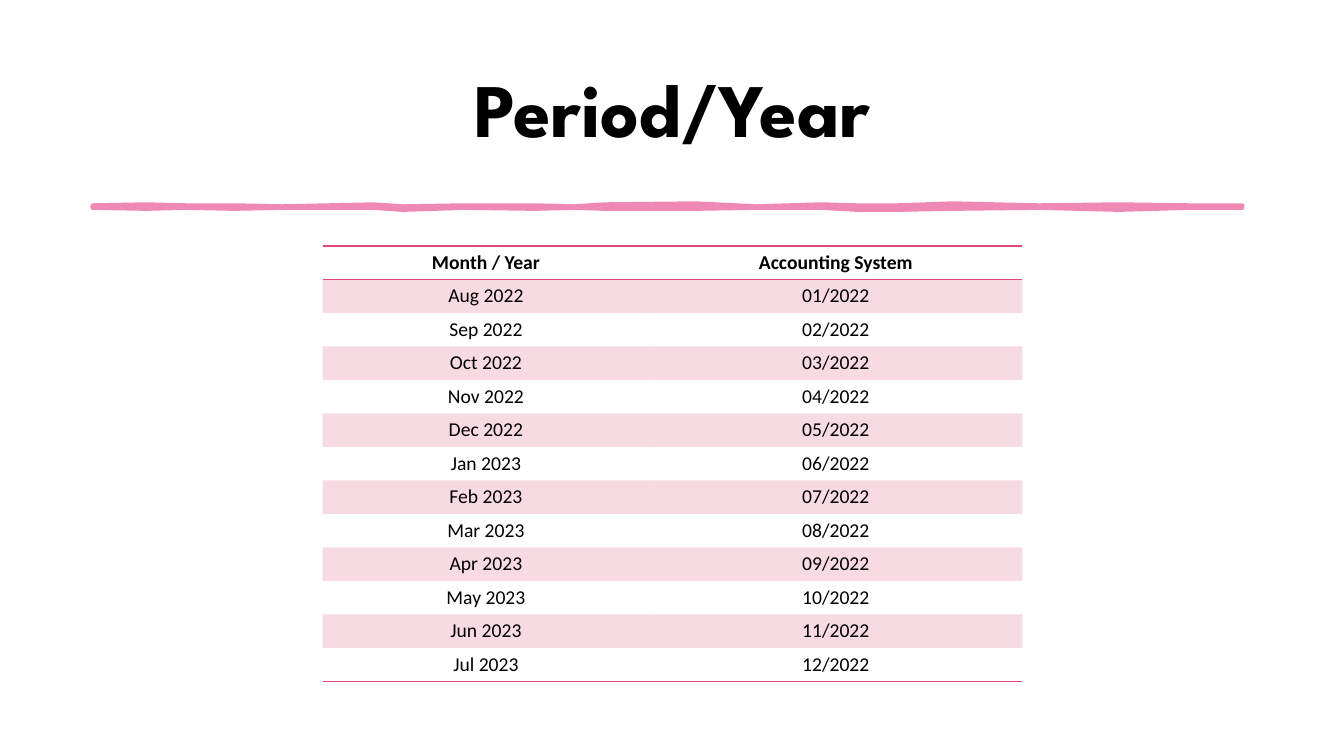
from dataclasses import dataclass

from lxml import etree
from pptx import Presentation
from pptx.dml.color import RGBColor
from pptx.enum.text import MSO_ANCHOR, PP_ALIGN
from pptx.oxml.ns import qn
from pptx.util import Inches, Pt

CENTER = PP_ALIGN.CENTER
MIDDLE = MSO_ANCHOR.MIDDLE
PLAIN_TABLE_STYLE = "{2D5ABB26-0587-4C30-8999-92F81FD0307C}"


@dataclass(frozen=True)
class Theme:
    ink: str = "000000"
    brush: str = "F088B6"
    accent: str = "E04975"
    band_opacity: int = 20
    title_font: str = "League Spartan"
    body_font: str = "Calibri"
    title_size: float = 54
    body_size: float = 14
    brush_width: float = 3.25
    rule_width: float = 1


THEME = Theme()

HEADINGS = ("Month / Year", "Accounting System")
MONTHS = ("Aug 2022", "Sep 2022", "Oct 2022", "Nov 2022", "Dec 2022", "Jan 2023",
          "Feb 2023", "Mar 2023", "Apr 2023", "May 2023", "Jun 2023", "Jul 2023")
PERIODS = [(month, f"{number:02d}/2022") for number, month in enumerate(MONTHS, 1)]

BRUSH_EDGES = (
    (0, 0.02, 0.04), (0.53, 0.01, 0.05), (0.93, 0.02, 0.04), (1.41, 0.02, 0.05),
    (1.88, 0.03, 0.04), (2.33, 0.02, 0.04), (2.78, 0.01, 0.04), (3.08, 0.03, 0.06),
    (3.68, 0.02, 0.04), (4.38, 0.02, 0.05), (4.78, 0.03, 0.04), (5.08, 0.01, 0.05),
    (5.98, 0, 0.05), (6.58, 0.03, 0.04), (7.23, 0.01, 0.04), (7.58, 0.02, 0.06),
    (7.98, 0.02, 0.06), (8.53, 0, 0.05), (9.38, 0.02, 0.04), (10.18, 0.01, 0.06),
    (10.88, 0.02, 0.04), (11.4, 0.02, 0.04),
)


def write_text(frame, text, *, font, size, bold=False, spacing=None):
    paragraph = frame.paragraphs[0]
    paragraph.alignment = CENTER
    if spacing:
        paragraph.line_spacing = spacing
    run = paragraph.add_run()
    run.text = text
    run.font.name = font
    run.font.size = Pt(size)
    run.font.bold = bold
    run.font.color.rgb = RGBColor.from_string(THEME.ink)


def add_title(slide, left, top, width, height):
    title = slide.shapes.add_textbox(Inches(left), Inches(top), Inches(width), Inches(height))
    frame = title.text_frame
    frame.word_wrap = True
    frame.vertical_anchor = MIDDLE
    write_text(frame, "Period/Year", font=THEME.title_font, size=THEME.title_size,
               bold=True, spacing=0.9)


def add_brush_stroke(slide, left, top):
    upper = [(Inches(left + x), Inches(top + y)) for x, y, _ in BRUSH_EDGES]
    lower = [(Inches(left + x), Inches(top + y)) for x, _, y in reversed(BRUSH_EDGES)]
    outline = slide.shapes.build_freeform(*upper[0])
    outline.add_line_segments(upper[1:] + lower, close=True)
    stroke = outline.convert_to_shape()
    stroke.shadow.inherit = False
    color = RGBColor.from_string(THEME.brush)
    stroke.fill.solid()
    stroke.fill.fore_color.rgb = color
    stroke.line.color.rgb = color
    stroke.line.width = Pt(THEME.brush_width)
    etree.SubElement(stroke.line._get_or_add_ln(), qn("a:round"))


def tint_cell(cell):
    cell.fill.solid()
    cell.fill.fore_color.rgb = RGBColor.from_string(THEME.accent)
    color = cell._tc.tcPr.find(".//" + qn("a:srgbClr"))
    etree.SubElement(color, qn("a:alpha"), val=str(THEME.band_opacity * 1000))


def rule_cell(cell, sides):
    properties = cell._tc.get_or_add_tcPr()
    for position, side in enumerate(sides):
        line = etree.Element(qn(f"a:ln{side}"), w=str(Pt(THEME.rule_width)))
        fill = etree.SubElement(line, qn("a:solidFill"))
        etree.SubElement(fill, qn("a:srgbClr"), val=THEME.accent)
        properties.insert(position, line)


def add_period_table(slide, left, top, width, height):
    rows = [HEADINGS, *PERIODS]
    last = len(rows) - 1
    frame = slide.shapes.add_table(len(rows), len(HEADINGS), Inches(left), Inches(top),
                                   Inches(width), Inches(height))
    table = frame.table
    table.horz_banding = False
    table._tbl.tblPr.find(qn("a:tableStyleId")).text = PLAIN_TABLE_STYLE
    month_width = 3.24
    table.columns[0].width = Inches(month_width)
    table.columns[1].width = Inches(width - month_width)
    for row_number, row in enumerate(rows):
        table.rows[row_number].height = Inches(height / len(rows))
        for column, text in enumerate(row):
            cell = table.cell(row_number, column)
            cell.vertical_anchor = MIDDLE
            cell.margin_left = cell.margin_right = Inches(0.08)
            cell.margin_top = cell.margin_bottom = Inches(0.04)
            write_text(cell.text_frame, text, font=THEME.body_font,
                       size=THEME.body_size, bold=row_number == 0)
            if row_number % 2:
                tint_cell(cell)
            else:
                cell.fill.background()
            if row_number == 0:
                rule_cell(cell, "TB")
            elif row_number == last:
                rule_cell(cell, "B")


def main():
    deck = Presentation()
    deck.slide_width = Inches(13.33)
    deck.slide_height = Inches(7.5)
    slide = deck.slides.add_slide(deck.slide_layouts[6])
    add_title(slide, 0.92, 0.4, 11.5, 1.45)
    add_brush_stroke(slide, 0.92, 2.02)
    add_period_table(slide, 3.2, 2.44, 6.94, 4.32)
    deck.save("out.pptx")


if __name__ == "__main__":
    main()
